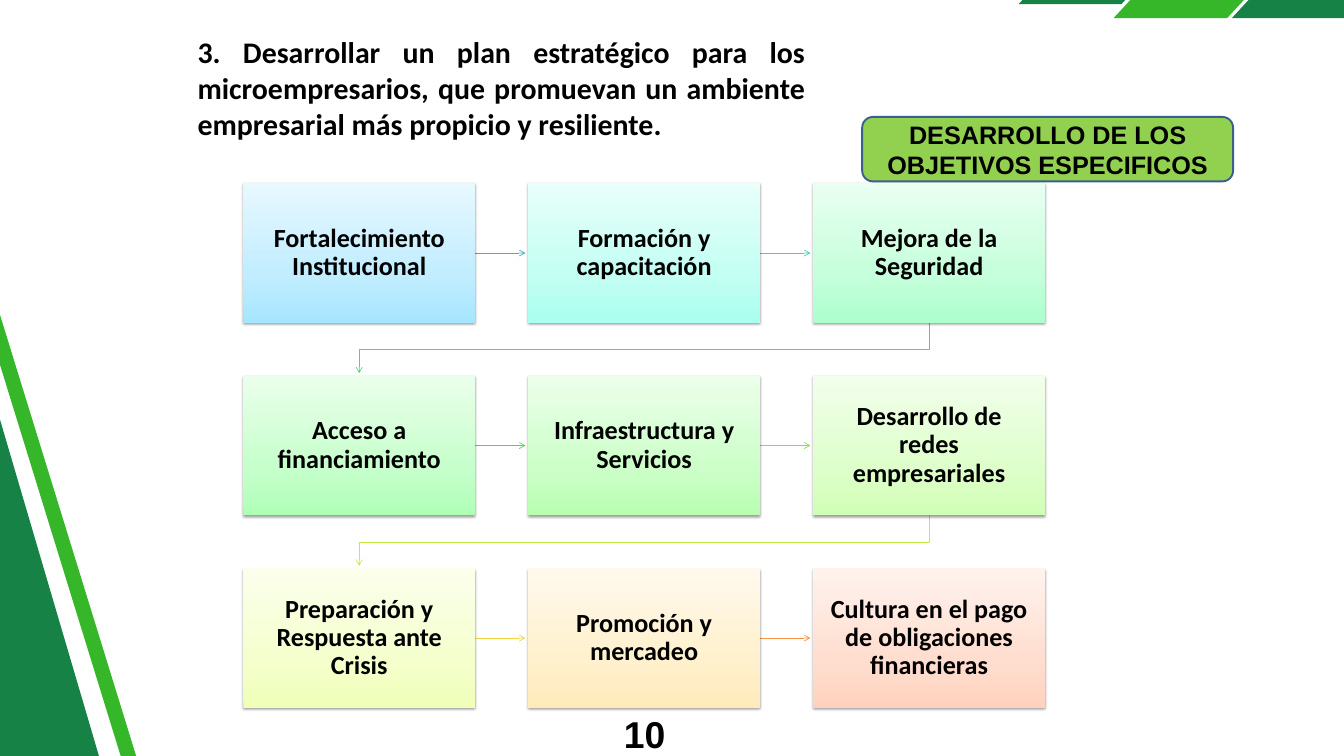
from copy import deepcopy
from dataclasses import dataclass

from lxml.etree import SubElement
from pptx import Presentation
from pptx.dml.color import RGBColor
from pptx.enum.shapes import MSO_CONNECTOR as Connector, MSO_SHAPE as Shape
from pptx.enum.text import MSO_ANCHOR as Anchor, MSO_AUTO_SIZE as AutoSize, PP_ALIGN as Align
from pptx.oxml.ns import qn
from pptx.util import Inches, Pt

SLIDE_W, SLIDE_H = 20, 11.25

BLACK = RGBColor(0x00, 0x00, 0x00)
DARK_GREEN = RGBColor(0x16, 0x82, 0x46)
LIGHT_GREEN = RGBColor(0x35, 0xB7, 0x29)
BADGE_FILL = RGBColor(0x92, 0xD0, 0x50)
BADGE_LINE = RGBColor(0x3A, 0x5F, 0x8C)

# Grid of the plan, in inches
COLUMNS = 3
GRID_LEFT, GRID_TOP = 3.62, 2.73
STEP_W, STEP_H = 3.45, 2.07
PITCH_X, PITCH_Y = 4.24, 2.865
ARROW_GAP = 0.04
ELBOW_DROP = 0.4


@dataclass(frozen=True)
class Step:
    label: str
    shades: tuple[str, str, str]  # from bottom to top
    arrow: str = ""  # colour of the arrow to the next step


@dataclass(frozen=True)
class Band:
    color: RGBColor
    corners: tuple[tuple[float, float], ...]


STEPS = (
    Step("Fortalecimiento Institucional", ("A7E6FF", "C1EDFF", "E7F8FF"), "4BACC6"),
    Step("Formación y capacitación", ("AAFFEF", "C3FFF3", "E8FFFA"), "49CEB6"),
    Step("Mejora de la Seguridad", ("ADFFCD", "C5FFDB", "E9FFF1"), "48D684"),
    Step("Acceso a financiamiento", ("B0FFB7", "C7FFCC", "EAFFEB"), "47DD4B"),
    Step("Infraestructura y Servicios", ("B9FFB2", "CDFFC9", "ECFFEA"), "80E446"),
    Step("Desarrollo de redes empresariales", ("D1FFB5", "DEFFCB", "F2FFEB"), "C3EB46"),
    Step("Preparación y Respuesta ante Crisis", ("F0FFB8", "F4FFCD", "FBFFEC"), "F1D746"),
    Step("Promoción y mercadeo", ("FFEBBA", "FFF1CE", "FFF9ED"), "F79646"),
    Step("Cultura en el pago de obligaciones financieras", ("FFD2BD", "FFDED0", "FFF2ED")),
)

BANDS = (
    Band(DARK_GREEN, ((16.01, -0.86), (17.53, -0.86), (16.69, 0.06), (15.16, 0.06))),
    Band(LIGHT_GREEN, ((17.8, -1.06), (19.49, -1.06), (18.26, 0.27), (16.57, 0.27))),
    Band(DARK_GREEN, ((19.56, -1.06), (21.25, -1.06), (20.02, 0.27), (18.33, 0.27))),
    Band(DARK_GREEN, ((-1.97, 17.32), (-6.6, 1.57), (-1.79, 0.16), (2.84, 15.9))),
    Band(LIGHT_GREEN, ((3.44, 16.58), (-1.4, 0.89), (-1.19, 0.83), (3.65, 16.51))),
)


def box(left: float, top: float, width: float, height: float) -> list:
    return [Inches(v) for v in (left, top, width, height)]


def write(shape, text: str, size: float, font: str, align, anchor, inset=None):
    """Put one bold run in the shape and return its paragraph."""
    frame = shape.text_frame
    frame.word_wrap = True
    frame.auto_size = AutoSize.NONE
    frame.vertical_anchor = anchor
    if inset is not None:
        frame.margin_left = frame.margin_right = Inches(inset)
        frame.margin_top = frame.margin_bottom = Inches(inset)
    paragraph = frame.paragraphs[0]
    paragraph.alignment = align
    run = paragraph.add_run()
    run.text = text
    run.font.size, run.font.name, run.font.bold = Pt(size), font, True
    run.font.color.rgb = BLACK
    return paragraph


def draw_path(slide, points, closed: bool):
    (x, y), *rest = [(Inches(px), Inches(py)) for px, py in points]
    builder = slide.shapes.build_freeform(x, y)
    builder.add_line_segments(rest, close=closed)
    shape = builder.convert_to_shape()
    shape.shadow.inherit = False
    return shape


def draw_band(slide, band: Band) -> None:
    shape = draw_path(slide, band.corners, closed=True)
    shape.fill.solid()
    shape.fill.fore_color.rgb = band.color
    shape.line.fill.background()


def step_origin(index: int) -> tuple[float, float]:
    row, column = divmod(index, COLUMNS)
    return GRID_LEFT + column * PITCH_X, GRID_TOP + row * PITCH_Y


def draw_arrow(slide, index: int, color: str) -> None:
    """Lead from one step to the next, straight or down to a new row."""
    left, top = step_origin(index)
    next_left, next_top = step_origin(index + 1)
    if next_top == top:
        middle = top + STEP_H / 2
        arrow = slide.shapes.add_connector(
            Connector.STRAIGHT, Inches(left + STEP_W), Inches(middle),
            Inches(next_left - ARROW_GAP), Inches(middle))
        SubElement(arrow.line._get_or_add_ln().getparent(), qn("a:effectLst"))
    else:
        start_x, end_x = left + STEP_W / 2, next_left + STEP_W / 2
        bottom = top + STEP_H
        turn = bottom + ELBOW_DROP
        arrow = draw_path(slide, ((start_x, bottom), (start_x, turn), (end_x, turn),
                                  (end_x, next_top - ARROW_GAP)), closed=False)
        arrow.fill.background()
    arrow.line.color.rgb = RGBColor.from_string(color)
    arrow.line.width = Pt(0.75)
    SubElement(arrow.line._get_or_add_ln(), qn("a:tailEnd"), type="arrow")


def shade(shape, colors: tuple[str, str, str]) -> None:
    """Fill with three colours running upwards."""
    shape.fill.gradient()
    shape.fill.gradient_angle = 90
    first = shape._element.spPr.find(".//" + qn("a:gs"))
    first.addnext(deepcopy(first))
    for stop, position, color in zip(shape.fill.gradient_stops, (0, 0.35, 1), colors):
        stop.position = position
        stop.color.rgb = RGBColor.from_string(color)


def add_shadow(shape) -> None:
    shape.shadow.inherit = False
    effects = shape._element.spPr.find(qn("a:effectLst"))
    shadow = SubElement(effects, qn("a:outerShdw"), blurRad=str(Pt(3.1)), dist=str(Pt(1.6)),
                        dir="5400000", rotWithShape="0")
    color = SubElement(shadow, qn("a:srgbClr"), val=str(BLACK))
    SubElement(color, qn("a:alpha"), val="38000")


def draw_step(slide, index: int, step: Step) -> None:
    card = slide.shapes.add_shape(Shape.RECTANGLE, *box(*step_origin(index), STEP_W, STEP_H))
    shade(card, step.shades)
    card.line.fill.background()
    add_shadow(card)
    label = write(card, step.label, 28, "Calibri", Align.CENTER, Anchor.MIDDLE, 0.22)
    label.line_spacing = 0.9


def main() -> None:
    deck = Presentation()
    deck.slide_width, deck.slide_height = Inches(SLIDE_W), Inches(SLIDE_H)
    slide = deck.slides.add_slide(deck.slide_layouts[5])

    # Corner decoration
    for band in BANDS:
        draw_band(slide, band)

    # Objective
    title = slide.shapes.title
    title.left, title.top, title.width, title.height = box(2.84, 0.45, 9.25, 2.26)
    write(title, "3. Desarrollar un plan estratégico para los microempresarios, "
          "que promuevan un ambiente empresarial más propicio y resiliente.",
          32, "Calibri", Align.JUSTIFY, Anchor.TOP)

    # Steps of the plan
    for index, step in enumerate(STEPS):
        if step.arrow:
            draw_arrow(slide, index, step.arrow)
        draw_step(slide, index, step)

    # Section badge
    badge = slide.shapes.add_shape(Shape.ROUNDED_RECTANGLE, *box(12.83, 1.74, 5.52, 0.96))
    badge.shadow.inherit = False
    badge.fill.solid()
    badge.fill.fore_color.rgb = BADGE_FILL
    badge.line.color.rgb = BADGE_LINE
    badge.line.width = Pt(2)
    write(badge, "DESARROLLO DE LOS OBJETIVOS ESPECIFICOS", 27, "Arial",
          Align.CENTER, Anchor.MIDDLE)

    # Page number
    page_number = slide.shapes.add_textbox(*box(8.58, 10.7, 1.32, 0.55))
    number = write(page_number, "10", 40, "Arial", Align.RIGHT, Anchor.TOP, 0)
    number.line_spacing = Pt(39.2)

    deck.save("out.pptx")


if __name__ == "__main__":
    main()
